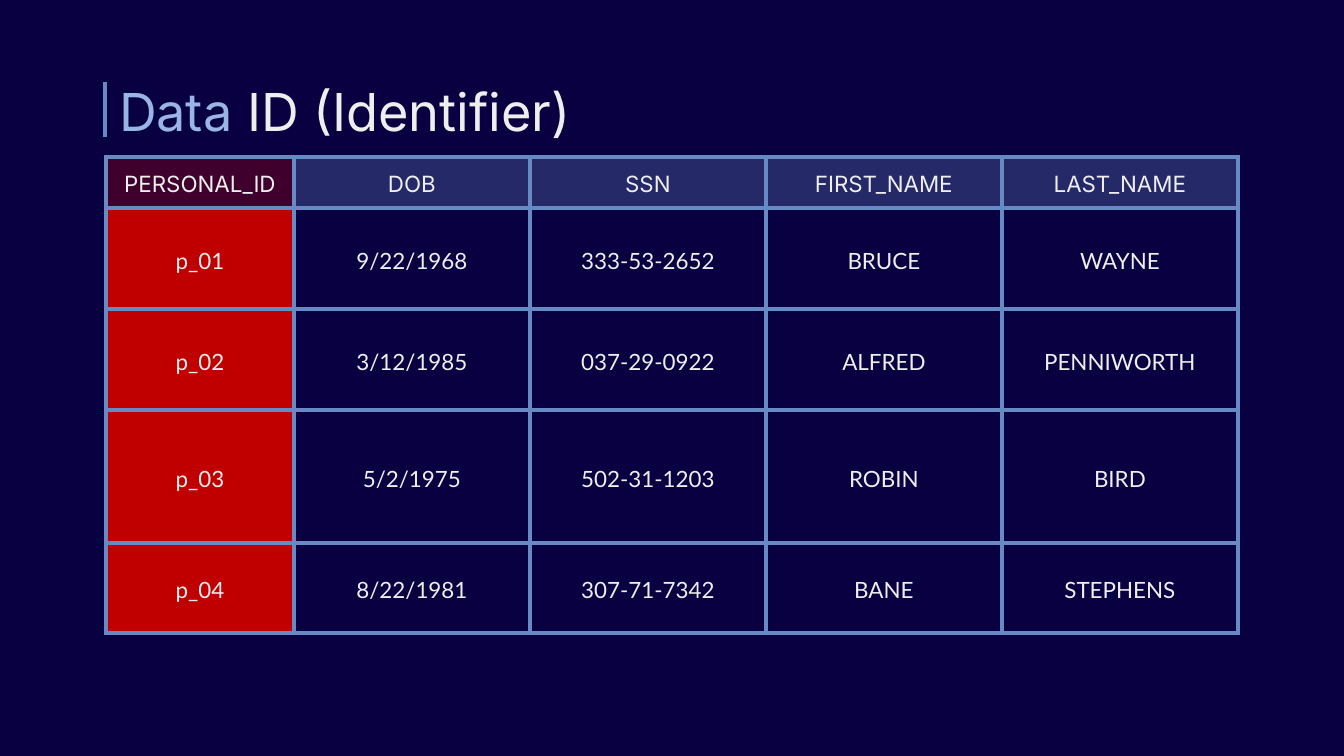
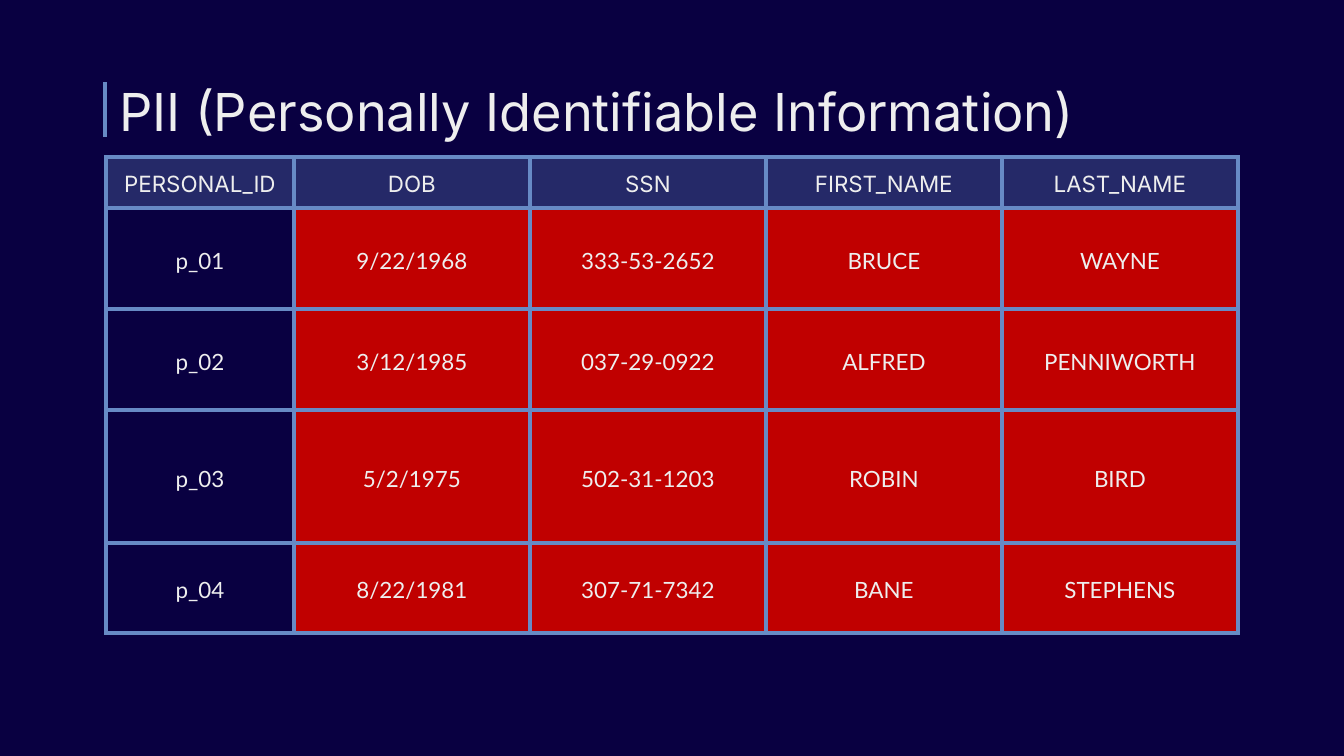
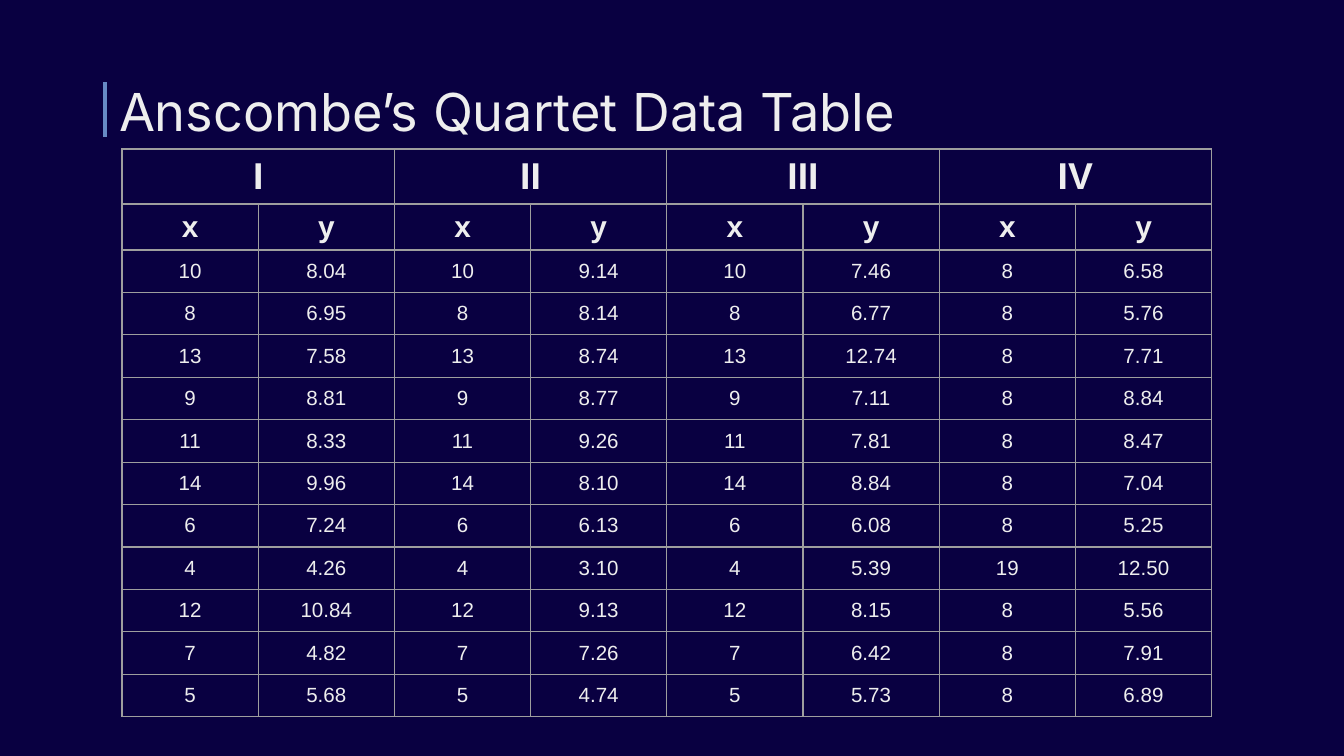
from dataclasses import dataclass

from lxml import etree
from pptx import Presentation
from pptx.dml.color import RGBColor
from pptx.enum.shapes import MSO_CONNECTOR
from pptx.enum.text import MSO_ANCHOR, MSO_AUTO_SIZE, PP_ALIGN
from pptx.oxml.ns import qn
from pptx.util import Pt

EMU_PER_PX = 914400 / 134.4
SLIDE_WIDTH, SLIDE_HEIGHT = 1344, 756
TITLE_ONLY_LAYOUT = 5

NAVY = RGBColor(0x09, 0x00, 0x41)
BLUE = RGBColor(0x67, 0x8A, 0xC5)
LIGHT_BLUE = RGBColor(0x99, 0xB5, 0xE6)
WHITE = RGBColor(0xEE, 0xEE, 0xEE)
RED = RGBColor(0xC0, 0x00, 0x00)
GREY = RGBColor(0x9E, 0x9E, 0x9E)

TITLE_FONT, BODY_FONT, NUMBER_FONT = "Inter", "Lato", "Arial"
STRAIGHT = MSO_CONNECTOR.STRAIGHT
LEFT, CENTER = PP_ALIGN.LEFT, PP_ALIGN.CENTER
TOP, MIDDLE = MSO_ANCHOR.TOP, MSO_ANCHOR.MIDDLE
NO_AUTO_SIZE = MSO_AUTO_SIZE.NONE

PERSON_HEADER = ["PERSONAL_ID", "DOB", "SSN", "FIRST_NAME", "LAST_NAME"]
PERSON_ROWS = [
    ["p_01", "9/22/1968", "333-53-2652", "BRUCE", "WAYNE"],
    ["p_02", "3/12/1985", "037-29-0922", "ALFRED", "PENNIWORTH"],
    ["p_03", "5/2/1975", "502-31-1203", "ROBIN", "BIRD"],
    ["p_04", "8/22/1981", "307-71-7342", "BANE", "STEPHENS"],
]

SHARED_X = [10, 8, 13, 9, 11, 14, 6, 4, 12, 7, 5]
QUARTET = {
    "I": (SHARED_X, [8.04, 6.95, 7.58, 8.81, 8.33, 9.96, 7.24, 4.26, 10.84, 4.82, 5.68]),
    "II": (SHARED_X, [9.14, 8.14, 8.74, 8.77, 9.26, 8.10, 6.13, 3.10, 9.13, 7.26, 4.74]),
    "III": (SHARED_X, [7.46, 6.77, 12.74, 7.11, 7.81, 8.84, 6.08, 5.39, 8.15, 6.42, 5.73]),
    "IV": ([8] * 7 + [19] + [8] * 3,
           [6.58, 5.76, 7.71, 8.84, 8.47, 7.04, 5.25, 12.50, 5.56, 7.91, 6.89]),
}


def px(length):
    return round(length * EMU_PER_PX)


def set_font(font, name, size, color=WHITE, bold=False):
    font.name = name
    font.size = Pt(size)
    font.color.rgb = color
    font.bold = bold


def set_margins(box, horizontal, vertical):
    box.margin_left = box.margin_right = px(horizontal)
    box.margin_top = box.margin_bottom = px(vertical)


@dataclass
class CellStyle:
    font: str
    size: int
    margins: tuple
    bold: bool = False
    line_spacing: float = 1.0
    fill: RGBColor | None = None
    opacity: int = 100


class Deck:
    def __init__(self):
        self.presentation = Presentation()
        self.presentation.slide_width = px(SLIDE_WIDTH)
        self.presentation.slide_height = px(SLIDE_HEIGHT)
        background = self.presentation.slide_master.background.fill
        background.solid()
        background.fore_color.rgb = NAVY
        self.slide = None

    def add_slide(self, *title_parts):
        """Start a slide; each title part is a (text, color) pair."""
        layout = self.presentation.slide_layouts[TITLE_ONLY_LAYOUT]
        self.slide = self.presentation.slides.add_slide(layout)
        self.title_bar()
        self.title(title_parts)

    def title_bar(self):
        bar = self.slide.shapes.add_connector(STRAIGHT, px(105), px(137), px(105), px(82))
        bar.line.color.rgb = BLUE
        bar.line.width = Pt(2.25)
        etree.SubElement(bar._element.spPr, qn("a:effectLst"))

    def title(self, parts):
        title = self.slide.shapes.title
        title.left, title.top, title.width, title.height = map(px, (106, 66, 1133, 85))
        frame = title.text_frame
        frame.word_wrap = True
        frame.auto_size = NO_AUTO_SIZE
        frame.vertical_anchor = TOP
        set_margins(frame, 13, 13)
        paragraph = frame.paragraphs[0]
        paragraph.alignment = LEFT
        for text, color in parts:
            run = paragraph.add_run()
            run.text = text
            set_font(run.font, TITLE_FONT, 28, color)

    def table(self, left, top, widths, heights, rows, border, style_of):
        """Draw rows of text; style_of(row, column) gives each cell's style."""
        frame = self.slide.shapes.add_table(
            len(heights), len(widths), px(left), px(top), px(sum(widths)), px(sum(heights)))
        table = frame.table
        table.first_row = table.horz_banding = False
        for column, width in zip(table.columns, widths):
            column.width = px(width)
        for row, height in zip(table.rows, heights):
            row.height = px(height)
        for row_index, texts in enumerate(rows):
            for column_index, text in enumerate(texts):
                cell = table.cell(row_index, column_index)
                self.cell_border(cell, *border)
                self.cell(cell, text, style_of(row_index, column_index))
        return table

    def cell(self, cell, text, style):
        cell.vertical_anchor = MIDDLE
        set_margins(cell, *style.margins)
        if style.fill is None:
            cell.fill.background()
        else:
            cell.fill.solid()
            cell.fill.fore_color.rgb = style.fill
            if style.opacity < 100:
                color = cell._tc.tcPr.find(qn("a:solidFill"))[0]
                etree.SubElement(color, qn("a:alpha"), val=str(style.opacity * 1000))
        cell.text_frame.text = text
        paragraph = cell.text_frame.paragraphs[0]
        paragraph.alignment = CENTER
        paragraph.line_spacing = style.line_spacing
        for run in paragraph.runs:
            set_font(run.font, style.font, style.size, bold=style.bold)

    def cell_border(self, cell, color, width):
        properties = cell._tc.get_or_add_tcPr()
        for side in ("a:lnL", "a:lnR", "a:lnT", "a:lnB"):
            line = etree.SubElement(properties, qn(side), w=str(Pt(width)))
            fill = etree.SubElement(line, qn("a:solidFill"))
            etree.SubElement(fill, qn("a:srgbClr"), val=str(color))


def add_person_table(deck, red_columns, red_header_columns=()):
    def style_of(row, column):
        if row == 0:
            fill = RED if column in red_header_columns else BLUE
            return CellStyle(TITLE_FONT, 12, (13, 7), line_spacing=1.15, fill=fill, opacity=30)
        margins = (7, 9) if column == 0 else (4, 3)
        fill = RED if column in red_columns else None
        return CellStyle(BODY_FONT, 12, margins, line_spacing=1.15, fill=fill)

    deck.table(106, 157, [188] + [236] * 4, [51, 101, 101, 133, 90],
               [PERSON_HEADER] + PERSON_ROWS, (BLUE, 2.25), style_of)


def add_quartet_table(deck):
    header_sizes = [20, 16]

    def style_of(row, column):
        is_header = row < len(header_sizes)
        size = header_sizes[row] if is_header else 11
        return CellStyle(NUMBER_FONT, size, (13, 6), bold=is_header)

    names = [text for name in QUARTET for text in (name, "")]
    rows = [names, ["x", "y"] * len(QUARTET)]
    for index in range(len(SHARED_X)):
        rows.append([text for xs, ys in QUARTET.values()
                     for text in (str(xs[index]), f"{ys[index]:.2f}")])
    row_height = 467 / len(SHARED_X)
    column_width = 1090 / len(names)
    table = deck.table(122, 149, [column_width] * len(names),
                       [55, 46] + [row_height] * len(SHARED_X),
                       rows, (GREY, 0.75), style_of)
    for column in range(0, len(names), 2):
        table.cell(0, column).merge(table.cell(0, column + 1))


def main():
    deck = Deck()
    deck.add_slide(("Data", LIGHT_BLUE), (" ID (Identifier)", WHITE))
    add_person_table(deck, red_columns=[0], red_header_columns=[0])

    deck.add_slide(("PII (Personally Identifiable Information)", WHITE))
    add_person_table(deck, red_columns=[1, 2, 3, 4])

    deck.add_slide(("Anscombe’s Quartet Data Table", WHITE))
    add_quartet_table(deck)
    deck.presentation.save("out.pptx")


if __name__ == "__main__":
    main()
